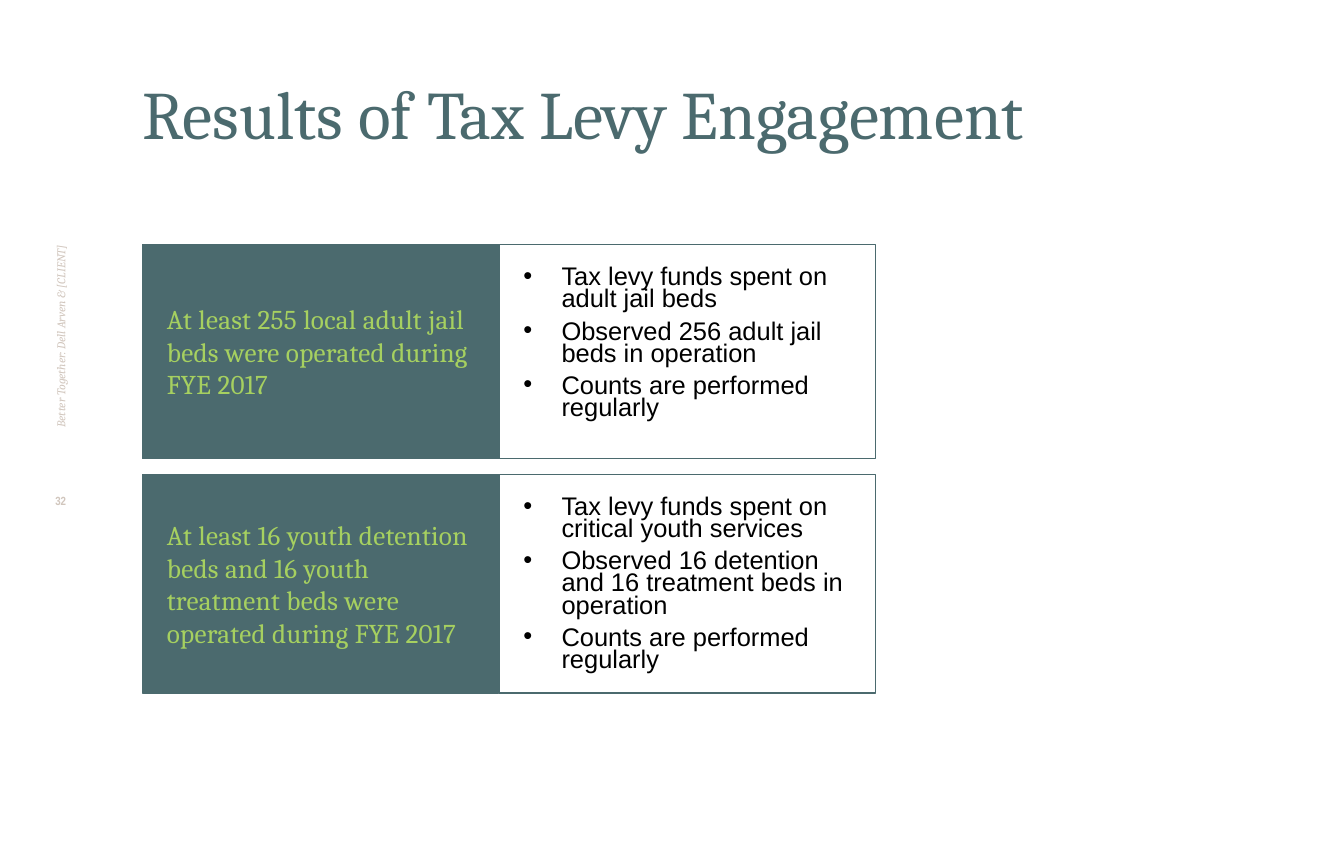
from lxml import etree
from pptx import Presentation
from pptx.dml.color import RGBColor
from pptx.enum.shapes import MSO_SHAPE
from pptx.enum.text import MSO_ANCHOR, PP_ALIGN
from pptx.oxml.ns import qn
from pptx.util import Pt

RECT = MSO_SHAPE.RECTANGLE
TOP, MIDDLE, BOTTOM = MSO_ANCHOR.TOP, MSO_ANCHOR.MIDDLE, MSO_ANCHOR.BOTTOM
LEFT, CENTER = PP_ALIGN.LEFT, PP_ALIGN.CENTER

COLORS = {"teal": "4B6A6E", "green": "A6D060", "sand": "D1C6BD", "black": "000000"}
SERIF, SANS, NARROW = "Cambria", "Arial", "Arial Narrow"

MARGIN_X = 84
FINDING_W, EVIDENCE_W = 210, 222
PAD = 14.4
INDENT = 22.5

# top, height, finding, evidence
RESULTS = [
    (144, 126.5, "At least 255 local adult jail beds were operated during FYE 2017",
     ["Tax levy funds spent on adult jail beds",
      "Observed 256 adult jail beds in operation",
      "Counts are performed regularly"]),
    (279.5, 129, "At least 16 youth detention beds and 16 youth treatment beds "
                 "were operated during FYE 2017",
     ["Tax levy funds spent on critical youth services",
      "Observed 16 detention and 16 treatment beds in operation",
      "Counts are performed regularly"]),
]


def rgb(name):
    return RGBColor.from_string(COLORS[name])


class SlideBuilder:
    def __init__(self, prs):
        self.slide = prs.slides.add_slide(prs.slide_layouts[6])

    def frame(self, sp, anchor, insets=(0, 0, 0, 0)):
        tf = sp.text_frame
        tf.word_wrap = True
        tf.vertical_anchor = anchor
        (tf.margin_left, tf.margin_top,
         tf.margin_right, tf.margin_bottom) = map(Pt, insets)
        return tf

    def run(self, p, text, font, size, color, bold=False, italic=False, tracking=0):
        """Add a run; tracking is in hundredths of a point."""
        r = p.add_run()
        r.text = text
        r.font.name, r.font.size = font, Pt(size)
        r.font.bold, r.font.italic = bold, italic
        r.font.color.rgb = rgb(color)
        if tracking:
            r._r.get_or_add_rPr().set("spc", str(tracking))

    def label(self, box, text, font, size, color, anchor=TOP, align=LEFT,
              vert=None, **style):
        sp = self.slide.shapes.add_textbox(*map(Pt, box))
        tf = self.frame(sp, anchor)
        if vert:
            tf._txBody.bodyPr.set("vert", vert)
        p = tf.paragraphs[0]
        p.alignment = align
        self.run(p, text, font, size, color, **style)

    def panel(self, box, fill=None):
        sp = self.slide.shapes.add_shape(RECT, *map(Pt, box))
        sp.shadow.inherit = False
        if fill:
            sp.fill.solid()
            sp.fill.fore_color.rgb = rgb(fill)
        else:
            sp.fill.background()
        sp.line.color.rgb = rgb("teal")
        sp.line.width = Pt(0.75)
        return sp

    def finding(self, box, text):
        tf = self.frame(self.panel(box, "teal"), MIDDLE, (PAD, 0, PAD, 0))
        p = tf.paragraphs[0]
        p.alignment = LEFT
        self.run(p, text, SERIF, 16, "green", tracking=20)

    def evidence(self, box, items):
        tf = self.frame(self.panel(box), TOP, (PAD, PAD, PAD, 0))
        for i, text in enumerate(items):
            p = tf.add_paragraph() if i else tf.paragraphs[0]
            self.bullet(p)
            p.alignment = LEFT
            p.line_spacing = Pt(13)
            p.space_before = Pt(6 if i else 0)
            self.run(p, text, SANS, 15, "black")

    def bullet(self, p):
        pPr = p._p.get_or_add_pPr()
        pPr.set("marL", str(Pt(INDENT)))
        pPr.set("indent", str(-Pt(INDENT)))
        etree.SubElement(pPr, qn("a:buFont")).set("typeface", SANS)
        etree.SubElement(pPr, qn("a:buChar")).set("char", "•")


def main():
    prs = Presentation()
    prs.slide_width, prs.slide_height = Pt(792), Pt(504)
    s = SlideBuilder(prs)

    s.label((22.5, 36, 26.5, 216), "Better Together: Dell Arven & [CLIENT]",
            SERIF, 7, "sand", anchor=MIDDLE, vert="vert270", italic=True)
    s.label((22.5, 291, 26.5, 27), "32", NARROW, 7, "sand", align=CENTER, bold=True)
    s.label((MARGIN_X, 36, 654, 54), "Results of Tax Levy Engagement",
            SERIF, 40, "teal", anchor=BOTTOM)

    for top, height, finding, evidence in RESULTS:
        s.finding((MARGIN_X, top, FINDING_W, height), finding)
        s.evidence((MARGIN_X + FINDING_W, top, EVIDENCE_W, height), evidence)

    prs.save("out.pptx")


if __name__ == "__main__":
    main()
